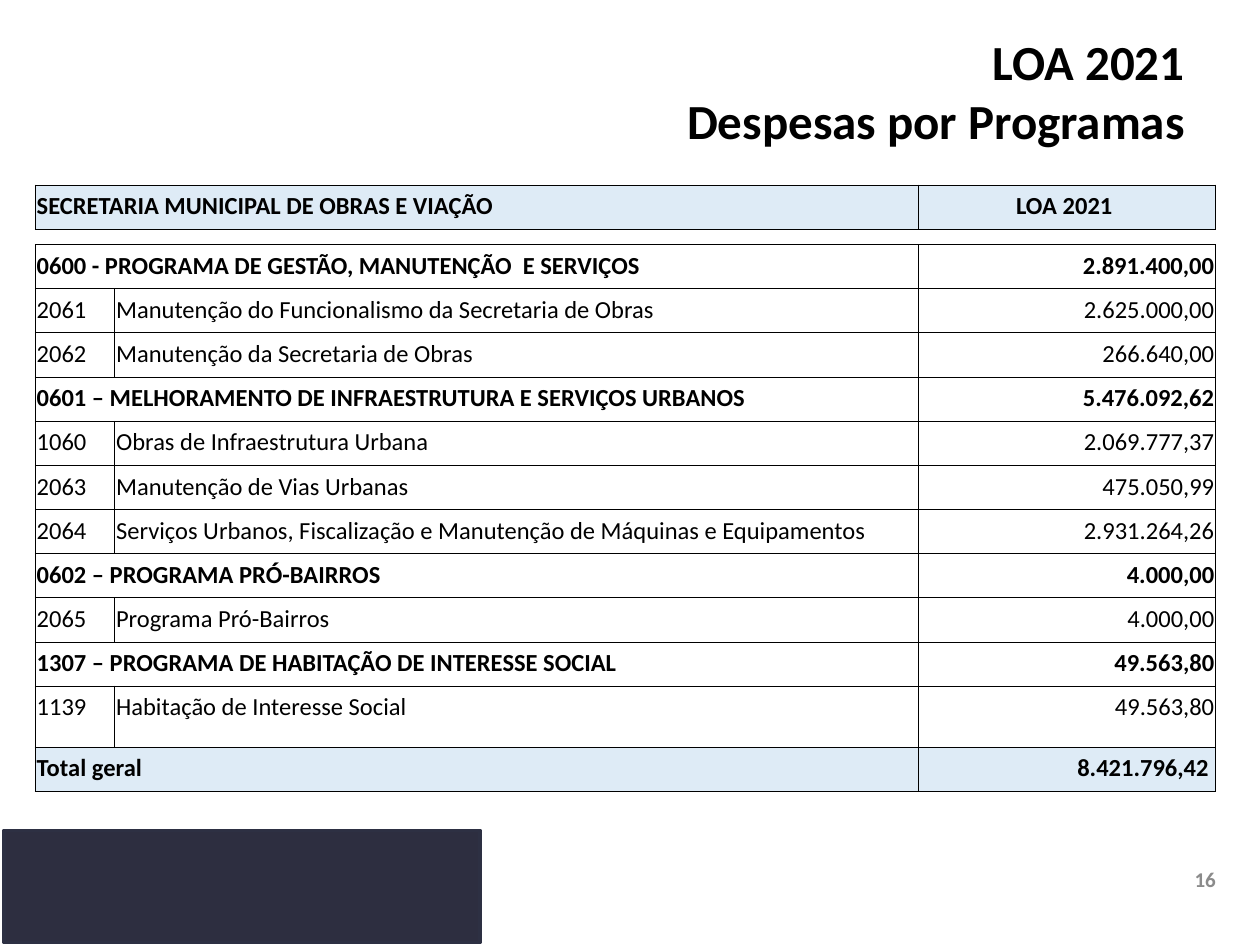
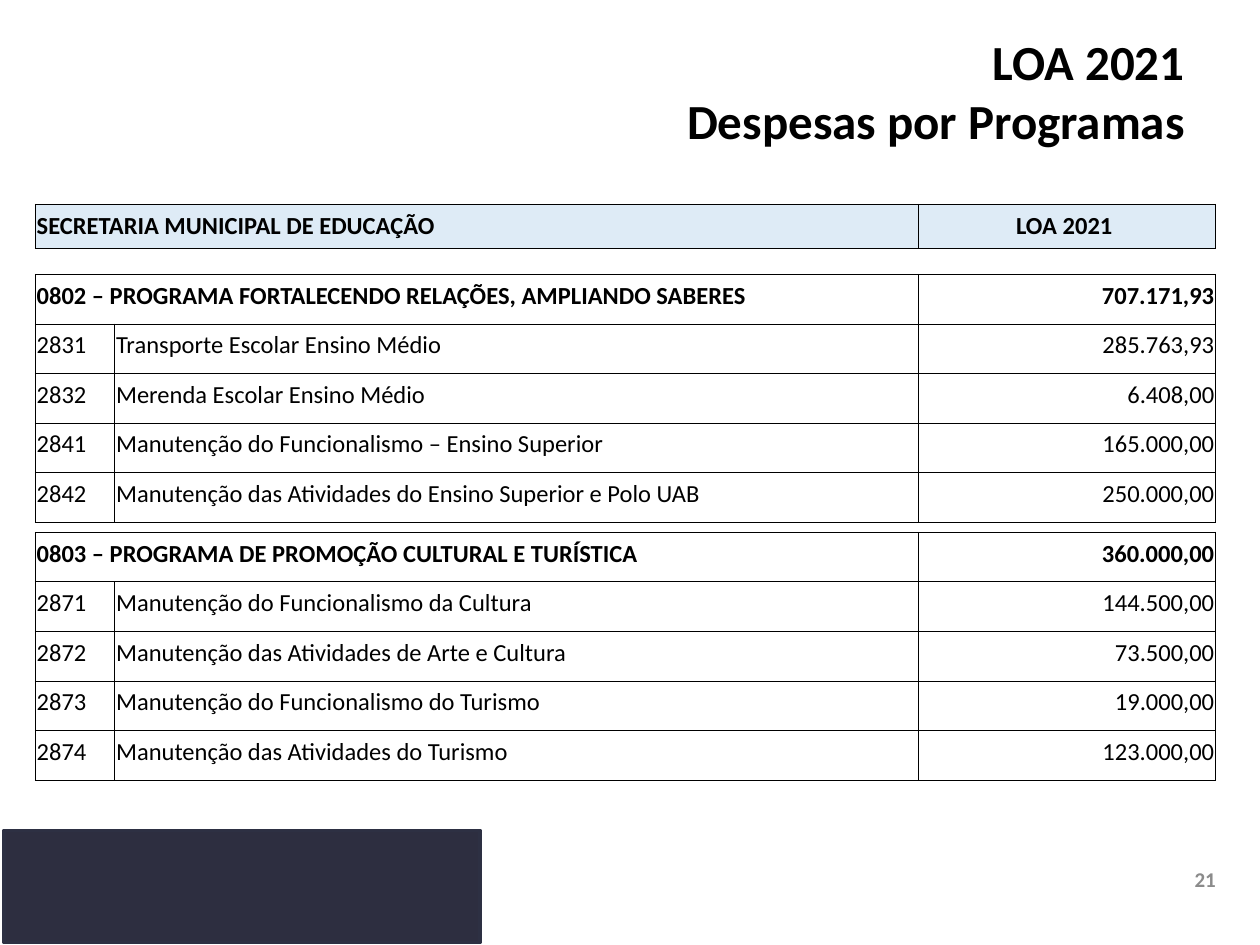
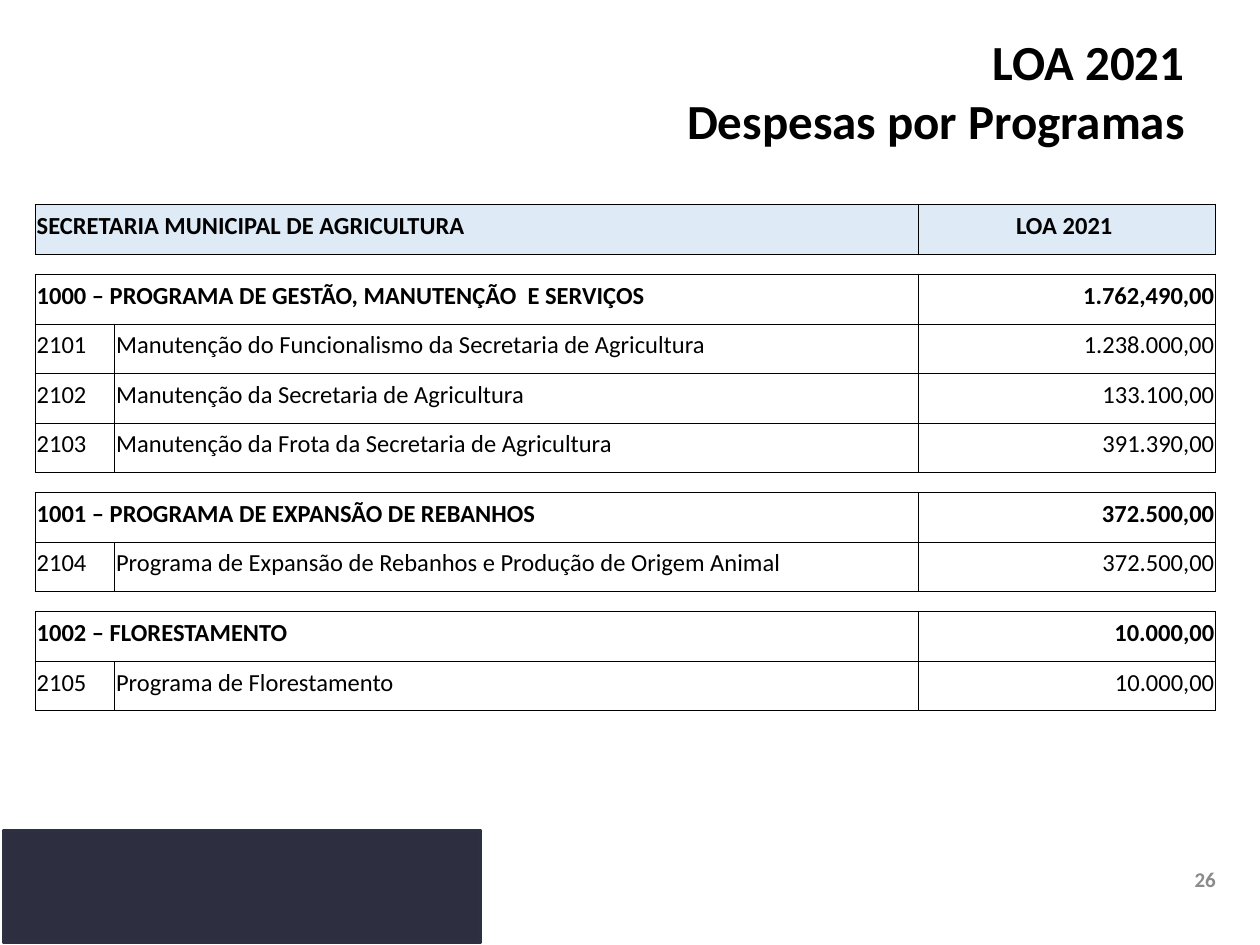
from dataclasses import dataclass

from lxml import etree
from pptx import Presentation
from pptx import util as u
from pptx.dml.color import RGBColor
from pptx.enum import shapes, text
from pptx.oxml.ns import qn

FONT = "Calibri"
BLACK, GREY, PALE_BLUE = "000000", "8B8B8B", "DEEBF6"
NAVY, NAVY_EDGE = "2D2E40", "2D3043"
LEFT, CENTER, RIGHT = text.PP_ALIGN.LEFT, text.PP_ALIGN.CENTER, text.PP_ALIGN.RIGHT

TABLE_LEFT = 0.71
CODE_WIDTH, NAME_WIDTH, VALUE_WIDTH = 1.6, 16.2, 6.0
TITLE_LINES = ("LOA 2021", "Despesas por Programas")


@dataclass
class Band:
    """Shaded one-row table: a label and a value."""
    top: float
    label: str
    value: str = "LOA 2021 "
    alignment: text.PP_ALIGN = CENTER
    height: float = 0.89


@dataclass
class ProgramTable:
    """Rows of (code, name, value); a row without a code is a program heading."""
    top: float
    rows: list[tuple[str, str, str]]
    row_height: float = 1.0
    last_height: float = 1.0


@dataclass
class Page:
    number: str
    bands: list[Band]
    tables: list[ProgramTable]


PAGES = [
    Page(
        "16",
        [Band(3.73, "SECRETARIA MUNICIPAL DE OBRAS E VIAÇÃO"),
         Band(15.06, "Total geral", "8.421.796,42 ", RIGHT)],
        [ProgramTable(4.93, [
            ("", "0600 - PROGRAMA DE GESTÃO, MANUTENÇÃO  E SERVIÇOS", "2.891.400,00"),
            ("2061", "Manutenção do Funcionalismo da Secretaria de Obras", "2.625.000,00"),
            ("2062", "Manutenção da Secretaria de Obras", "266.640,00"),
            ("", "0601 – MELHORAMENTO DE INFRAESTRUTURA E SERVIÇOS URBANOS", "5.476.092,62"),
            ("1060", "Obras de Infraestrutura Urbana", "2.069.777,37"),
            ("2063", "Manutenção de Vias Urbanas", "475.050,99"),
            ("2064", "Serviços Urbanos, Fiscalização e Manutenção de Máquinas e Equipamentos",
             "2.931.264,26"),
            ("", "0602 – PROGRAMA PRÓ-BAIRROS", "4.000,00"),
            ("2065", "Programa Pró-Bairros", "4.000,00"),
            ("", "1307 – PROGRAMA DE HABITAÇÃO DE INTERESSE SOCIAL", "49.563,80"),
            ("1139", "Habitação de Interesse Social", "49.563,80"),
        ], row_height=0.89, last_height=1.23)],
    ),
    Page(
        "21",
        [Band(4.12, "SECRETARIA MUNICIPAL DE EDUCAÇÃO")],
        [ProgramTable(5.53, [
            ("", "0802 – PROGRAMA FORTALECENDO RELAÇÕES, AMPLIANDO SABERES", "707.171,93"),
            ("2831", "Transporte Escolar Ensino Médio", "285.763,93"),
            ("2832", "Merenda Escolar Ensino Médio", "6.408,00"),
            ("2841", "Manutenção do Funcionalismo – Ensino Superior", "165.000,00"),
            ("2842", "Manutenção das Atividades do Ensino Superior e Polo UAB", "250.000,00"),
        ]), ProgramTable(10.73, [
            ("", "0803 – PROGRAMA DE PROMOÇÃO CULTURAL E TURÍSTICA", "360.000,00"),
            ("2871", "Manutenção do Funcionalismo da Cultura", "144.500,00"),
            ("2872", "Manutenção das Atividades de Arte e Cultura", "73.500,00"),
            ("2873", "Manutenção do Funcionalismo do Turismo", "19.000,00"),
            ("2874", "Manutenção das Atividades do Turismo", "123.000,00"),
        ])],
    ),
    Page(
        "26",
        [Band(4.12, "SECRETARIA MUNICIPAL DE AGRICULTURA", height=1.0)],
        [ProgramTable(5.53, [
            ("", "1000 – PROGRAMA DE GESTÃO, MANUTENÇÃO  E SERVIÇOS", "1.762,490,00"),
            ("2101", "Manutenção do Funcionalismo da Secretaria de Agricultura", "1.238.000,00"),
            ("2102", "Manutenção da Secretaria de Agricultura", "133.100,00"),
            ("2103", "Manutenção da Frota da Secretaria de Agricultura", "391.390,00"),
        ]), ProgramTable(9.93, [
            ("", "1001 – PROGRAMA DE EXPANSÃO DE REBANHOS", "372.500,00"),
            ("2104", "Programa de Expansão de Rebanhos e Produção de Origem Animal", "372.500,00"),
        ]), ProgramTable(12.33, [
            ("", "1002 – FLORESTAMENTO", "10.000,00"),
            ("2105", "Programa de Florestamento", "10.000,00"),
        ])],
    ),
]


def color(hex_value: str) -> RGBColor:
    return RGBColor.from_string(hex_value)


def set_values(target, values: dict) -> None:
    for name, value in values.items():
        setattr(target, name, value)


def write(paragraph, lines, size: float, alignment, bold=True, hex_value=BLACK) -> None:
    """Fill a paragraph with lines parted by line breaks."""
    paragraph.alignment = alignment
    for index, line in enumerate(lines):
        if index:
            paragraph.add_line_break()
        font = paragraph.add_run().font
        paragraph.runs[-1].text = line
        set_values(font, {"name": FONT, "size": u.Pt(size), "bold": bold})
        font.color.rgb = color(hex_value)


def add_text(slide, box, lines, size: float, alignment, hex_value=BLACK) -> None:
    frame = slide.shapes.add_textbox(*map(u.Cm, box)).text_frame
    set_values(frame, {"word_wrap": True, "vertical_anchor": text.MSO_ANCHOR.MIDDLE})
    write(frame.paragraphs[0], lines, size, alignment, hex_value=hex_value)


def add_borders(cell) -> None:
    properties = cell._tc.get_or_add_tcPr()
    for index, side in enumerate(("a:lnL", "a:lnR", "a:lnT", "a:lnB")):
        line = etree.Element(qn(side), w=str(u.Pt(0.5)))
        fill = etree.SubElement(line, qn("a:solidFill"))
        etree.SubElement(fill, qn("a:srgbClr"), val=BLACK)
        properties.insert(index, line)


def add_grid(slide, top: float, widths, heights, fill: str | None = None):
    """Add an empty bordered table and return it."""
    table = slide.shapes.add_table(
        len(heights), len(widths), u.Cm(TABLE_LEFT), u.Cm(top),
        u.Cm(sum(widths)), u.Cm(sum(heights))).table
    set_values(table, {"first_row": False, "horz_banding": False})
    for column, width in zip(table.columns, widths):
        column.width = u.Cm(width)
    for row, height in zip(table.rows, heights):
        row.height = u.Cm(height)
    margins = {"margin_left": u.Cm(0.03), "margin_right": u.Cm(0.03),
               "margin_top": u.Cm(0.13), "margin_bottom": u.Cm(0.13)}
    for cell in table.iter_cells():
        set_values(cell, margins)
        if fill:
            cell.fill.solid()
            cell.fill.fore_color.rgb = color(fill)
        else:
            cell.fill.background()
        add_borders(cell)
    return table


def write_cell(cell, content: str, alignment=LEFT, bold=True) -> None:
    write(cell.text_frame.paragraphs[0], [content], 14, alignment, bold)


def add_band(slide, band: Band) -> None:
    widths = (CODE_WIDTH + NAME_WIDTH, VALUE_WIDTH)
    table = add_grid(slide, band.top, widths, [band.height], PALE_BLUE)
    write_cell(table.cell(0, 0), band.label)
    write_cell(table.cell(0, 1), band.value, band.alignment)


def add_program_table(slide, program: ProgramTable) -> None:
    heights = [program.row_height] * (len(program.rows) - 1) + [program.last_height]
    table = add_grid(slide, program.top, (CODE_WIDTH, NAME_WIDTH, VALUE_WIDTH), heights)
    for index, (code, name, value) in enumerate(program.rows):
        first, second, last = (table.cell(index, column) for column in range(3))
        if code:
            write_cell(first, code, bold=False)
            write_cell(second, name, bold=False)
        else:
            first.merge(second)
            write_cell(first, name)
        write_cell(last, value, RIGHT, bold=not code)


def add_footer_block(slide) -> None:
    block = slide.shapes.add_shape(
        shapes.MSO_SHAPE.RECTANGLE, *map(u.Cm, (0.08, 16.74, 9.6, 2.26)))
    block.shadow.inherit = False
    block.fill.solid()
    block.fill.fore_color.rgb = color(NAVY)
    block.line.color.rgb = color(NAVY_EDGE)
    block.line.width = u.Pt(2)


def add_page(presentation, page: Page) -> None:
    slide = presentation.slides.add_slide(presentation.slide_layouts[6])
    # Title and page number
    add_text(slide, (8.51, 0.53, 15.62, 2.59), TITLE_LINES, 28, RIGHT)
    add_text(slide, (23.7, 17.12, 1.19, 1.19), [page.number], 12, CENTER, GREY)
    # Budget tables
    for program in page.tables:
        add_program_table(slide, program)
    for band in page.bands:
        add_band(slide, band)
    add_footer_block(slide)


def main() -> None:
    presentation = Presentation()
    set_values(presentation, {"slide_width": u.Cm(25.4), "slide_height": u.Cm(19.05)})
    for page in PAGES:
        add_page(presentation, page)
    presentation.save("out.pptx")


if __name__ == "__main__":
    main()
